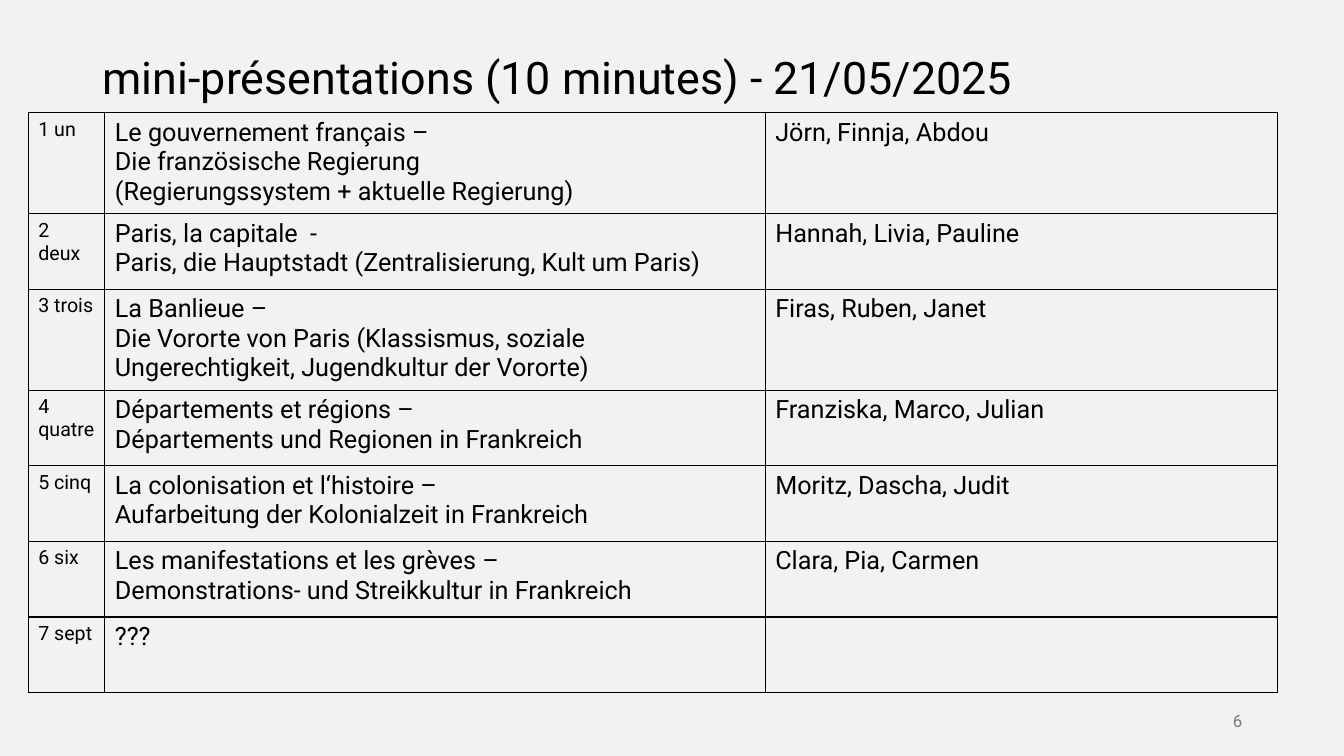
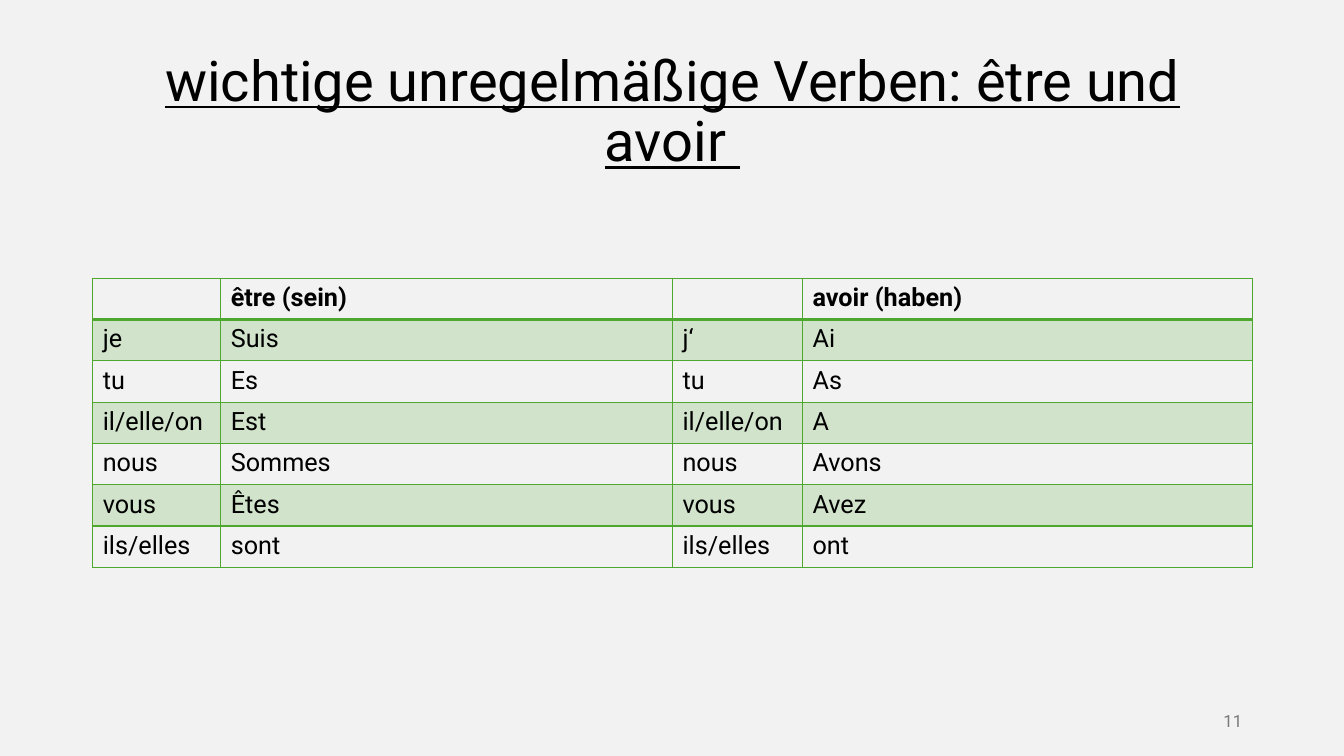
import pptx
import pptx.dml.color
import pptx.enum.text
import pptx.oxml
import pptx.oxml.ns
import pptx.util

Inches = pptx.util.Inches
Align = pptx.enum.text.PP_ALIGN
Anchor = pptx.enum.text.MSO_ANCHOR

COLORS = {
    "background": "F2F2F2",
    "text": "000000",
    "number": "797979",
    "green": "4EA72E",
}
FONT = "Roboto"

TOPICS = [
    ("1 un", "Le gouvernement français –\nDie französische Regierung\n"
             "(Regierungssystem + aktuelle Regierung)", "Jörn, Finnja, Abdou"),
    ("2 deux", "Paris, la capitale  -\n"
               "Paris, die Hauptstadt (Zentralisierung, Kult um Paris)",
     "Hannah, Livia, Pauline"),
    ("3 trois", "La Banlieue –\nDie Vororte von Paris (Klassismus, soziale "
                "Ungerechtigkeit, Jugendkultur der Vororte)",
     "Firas, Ruben, Janet"),
    ("4 quatre", "Départements et régions –\n"
                 "Départements und Regionen in Frankreich",
     "Franziska, Marco, Julian"),
    ("5 cinq", "La colonisation et l‘histoire –\n"
               "Aufarbeitung der Kolonialzeit in Frankreich",
     "Moritz, Dascha, Judit"),
    ("6 six", "Les manifestations et les grèves –\n"
              "Demonstrations- und Streikkultur in Frankreich",
     "Clara, Pia, Carmen"),
    ("7 sept", "???", ""),
]

VERBS = [
    ("", "être (sein)", "", "avoir (haben)"),
    ("je", "Suis", "j‘", "Ai"),
    ("tu", "Es", "tu", "As"),
    ("il/elle/on", "Est", "il/elle/on", "A"),
    ("nous", "Sommes", "nous", "Avons"),
    ("vous", "Êtes", "vous", "Avez"),
    ("ils/elles", "sont", "ils/elles", "ont"),
]


def rgb(color):
    return pptx.dml.color.RGBColor.from_string(COLORS[color])


def write(frame, text, size=18, color="text", bold=False, underline=False,
          align=Align.LEFT, spacing=1.0):
    frame.word_wrap = True
    for index, line in enumerate(text.split("\n")):
        paragraph = frame.paragraphs[0] if index == 0 else frame.add_paragraph()
        paragraph.alignment = align
        paragraph.line_spacing = spacing
        if line:
            run = paragraph.add_run()
            run.text = line
            run.font.name = FONT
            run.font.size = pptx.util.Pt(size)
            run.font.color.rgb = rgb(color)
            run.font.bold = bold
            run.font.underline = underline


class Deck:
    def __init__(self):
        self.presentation = pptx.Presentation()
        self.presentation.slide_width = Inches(13.33)
        self.presentation.slide_height = Inches(7.5)
        self.slide = None

    def add_slide(self, number):
        layout = self.presentation.slide_layouts[6]
        self.slide = self.presentation.slides.add_slide(layout)
        fill = self.slide.background.fill
        fill.solid()
        fill.fore_color.rgb = rgb("background")
        self.add_text(str(number), 9.42, 6.95, 3, 0.4, size=12,
                      color="number", align=Align.RIGHT)

    def add_text(self, text, left, top, width, height, anchor=Anchor.MIDDLE,
                 **style):
        shape = self.slide.shapes.add_textbox(
            Inches(left), Inches(top), Inches(width), Inches(height))
        shape.text_frame.vertical_anchor = anchor
        write(shape.text_frame, text, **style)
        return shape

    def add_title(self, text, **style):
        return self.add_text(text, 0.92, 0.4, 11.5, 1.45, spacing=0.9, **style)

    def add_table(self, rows, left, top, widths, heights, border, style_of,
                  header_rule=1, banded=False):
        table = self.slide.shapes.add_table(
            len(rows), len(widths), Inches(left), Inches(top),
            Inches(sum(widths)), Inches(sum(heights))).table
        table.first_row = False
        table.horz_banding = False
        for column, width in zip(table.columns, widths):
            column.width = Inches(width)
        for row_index, (values, height) in enumerate(zip(rows, heights)):
            table.rows[row_index].height = Inches(height)
            for column_index, value in enumerate(values):
                cell = table.cell(row_index, column_index)
                write(cell.text_frame, value,
                      **style_of(row_index, column_index))
                self.fill_cell(cell, border, banded and row_index % 2 == 1)
                self.draw_borders(
                    cell, border,
                    top=header_rule if row_index == 1 else 1,
                    bottom=header_rule if row_index == 0 else 1)

    def fill_cell(self, cell, color, tinted):
        if not tinted:
            cell.fill.background()
            return
        cell.fill.solid()
        cell.fill.fore_color.rgb = rgb(color)
        properties = cell._tc.get_or_add_tcPr()
        tint = properties.find(".//" + pptx.oxml.ns.qn("a:srgbClr"))
        tint.append(pptx.oxml.parse_xml(
            f'<a:alpha {pptx.oxml.ns.nsdecls("a")} val="20000"/>'))

    def draw_borders(self, cell, color, top, bottom):
        properties = cell._tc.get_or_add_tcPr()
        sides = {"lnL": 1, "lnR": 1, "lnT": top, "lnB": bottom}
        for index, (side, points) in enumerate(sides.items()):
            properties.insert(index, pptx.oxml.parse_xml(
                f'<a:{side} {pptx.oxml.ns.nsdecls("a")} '
                f'w="{int(pptx.util.Pt(points))}"><a:solidFill>'
                f'<a:srgbClr val="{COLORS[color]}"/></a:solidFill></a:{side}>'))


def build_topics(deck):
    deck.add_slide(6)
    title = deck.add_title("mini-présentations (10 minutes) - 21/05/2025",
                           size=32, anchor=Anchor.TOP)
    title.text_frame.margin_top = Inches(0.15)
    three_line_rows = (0, 2)
    heights = [0.98 if index in three_line_rows else 0.75
               for index in range(len(TOPICS))]
    deck.add_table(TOPICS, 0.28, 1.12, [0.76, 6.55, 5.08], heights, "text",
                   lambda row, column: {"size": 18 if column else 14})


def build_verbs(deck):
    deck.add_slide(11)
    deck.add_title("wichtige unregelmäßige Verben: être und avoir ",
                   size=40, underline=True, align=Align.CENTER)
    deck.add_table(VERBS, 0.92, 2.76, [1.27, 4.48, 1.29, 4.46],
                   [0.41] * len(VERBS), "green",
                   lambda row, column: {"bold": row == 0},
                   header_rule=2, banded=True)


def main():
    deck = Deck()
    build_topics(deck)
    build_verbs(deck)
    deck.presentation.save("out.pptx")


if __name__ == "__main__":
    main()
